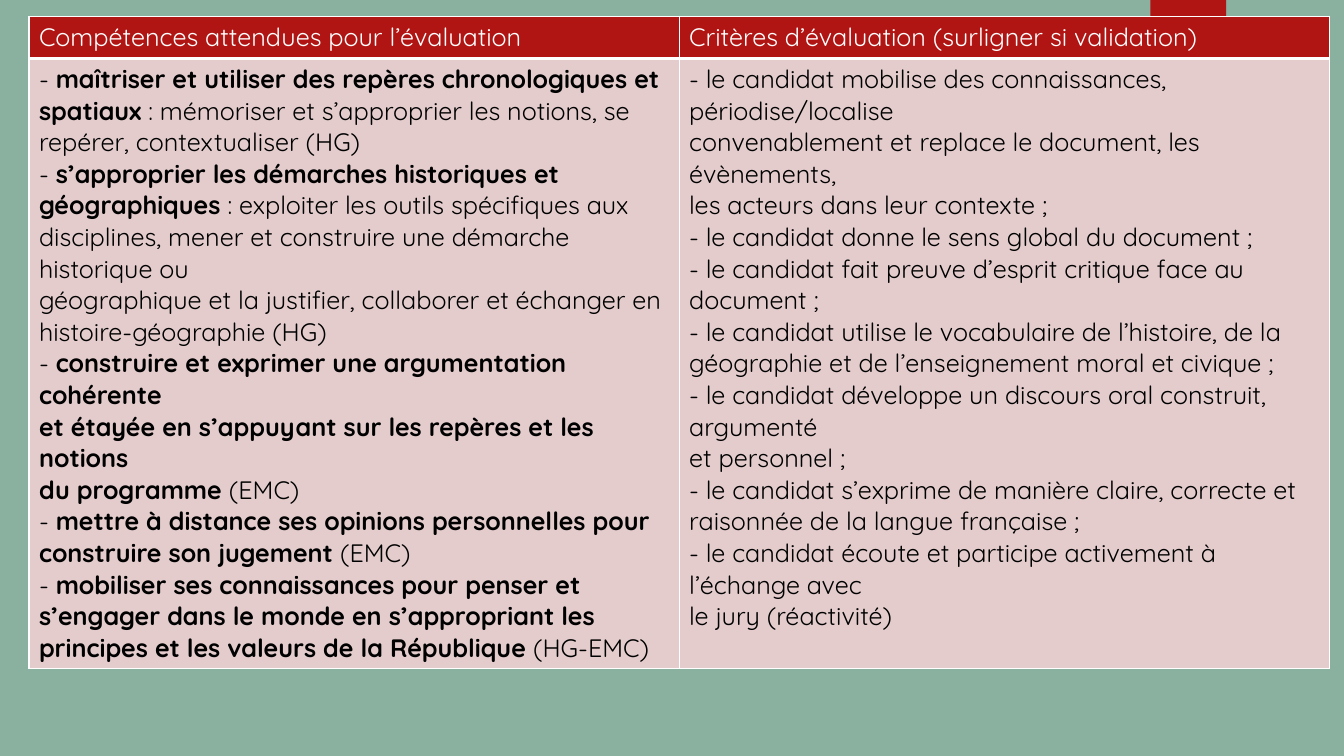
from lxml import etree
from pptx import Presentation
from pptx.dml.color import RGBColor
from pptx.enum.shapes import MSO_SHAPE
from pptx.oxml.ns import qn
from pptx.util import Cm, Pt

RECTANGLE = MSO_SHAPE.RECTANGLE
FONT = "Quicksand"
GREEN, RED, PINK = "8AB0A0", "B01513", "E4CCCC"
WHITE, BLACK = "FFFFFF", "000000"

HEADERS = [
    "Compétences attendues pour l’évaluation",
    "Critères d’évaluation (surligner si validation)",
]
# Text between asterisks is bold.
SKILLS = [
    "- *maîtriser et utiliser des repères chronologiques et*",
    "*spatiaux *: mémoriser et s’approprier les notions, se",
    "repérer, contextualiser (HG)",
    "- *s’approprier les démarches historiques et*",
    "*géographiques *: exploiter les outils spécifiques aux",
    "disciplines, mener et construire une démarche historique ou",
    "géographique et la justifier, collaborer et échanger en",
    "histoire-géographie (HG)",
    "- *construire et exprimer une argumentation cohérente*",
    "*et étayée en s’appuyant sur les repères et les notions*",
    "*du programme *(EMC)",
    "- *mettre à distance ses opinions personnelles pour*",
    "*construire son jugement *(EMC)",
    "- *mobiliser ses connaissances pour penser et*",
    "*s’engager dans le monde en s’appropriant les*",
    "*principes et les valeurs de la République *(HG-EMC)",
]
CRITERIA = [
    "- le candidat mobilise des connaissances, périodise/localise",
    "convenablement et replace le document, les évènements,",
    "les acteurs dans leur contexte ;",
    "- le candidat donne le sens global du document ;",
    "- le candidat fait preuve d’esprit critique face au document ;",
    "- le candidat utilise le vocabulaire de l’histoire, de la",
    "géographie et de l’enseignement moral et civique ;",
    "- le candidat développe un discours oral construit, argumenté",
    "et personnel ;",
    "- le candidat s’exprime de manière claire, correcte et",
    "raisonnée de la langue française ;",
    "- le candidat écoute et participe activement à l’échange avec",
    "le jury (réactivité)",
]
ROWS = [
    ([[header] for header in HEADERS], RED, WHITE, {"L": 1, "R": 1, "T": 1, "B": 3}),
    ([SKILLS, CRITERIA], PINK, BLACK, {"L": 1, "R": 1, "T": 3, "B": 1}),
]


def set_color(fill, color):
    fill.solid()
    fill.fore_color.rgb = RGBColor.from_string(color)


def add_borders(cell, widths):
    """Draw white cell borders; widths maps a side (L, R, T, B) to points."""
    tcPr = cell._tc.get_or_add_tcPr()
    for side, width in widths.items():
        ln = etree.SubElement(tcPr, qn(f"a:ln{side}"), w=str(Pt(width)))
        solid = etree.SubElement(ln, qn("a:solidFill"))
        etree.SubElement(solid, qn("a:srgbClr"), val=WHITE)


prs = Presentation()
prs.slide_width, prs.slide_height = Cm(33.87), Cm(19.05)
s = prs.slides.add_slide(prs.slide_layouts[6])
set_color(s.background.fill, GREEN)

tab = s.shapes.add_shape(RECTANGLE, Cm(28.99), Cm(0), Cm(1.91), Cm(3.18))
tab.shadow.inherit = False
set_color(tab.fill, RED)
tab.line.fill.background()

table = s.shapes.add_table(2, 2, Cm(0.73), Cm(0.42), Cm(32.77), Cm(16.4)).table
table.horz_banding = False
table.rows[0].height = Cm(1.04)
table.rows[1].height = Cm(15.36)

for row, (texts, fill, color, borders) in zip(table.rows, ROWS):
    for cell, lines in zip(row.cells, texts):
        add_borders(cell, borders)
        set_color(cell.fill, fill)
        tf = cell.text_frame
        tf.text = "\n".join(line.replace("*", "") for line in lines)
        for p, line in zip(tf.paragraphs, lines):
            p.clear()
            for i, part in enumerate(line.split("*")):
                if part:
                    r = p.add_run()
                    r.text = part
                    r.font.name = FONT
                    r.font.size = Pt(18)
                    r.font.bold = i % 2 == 1
                    set_color(r.font.fill, color)

prs.save("out.pptx")
